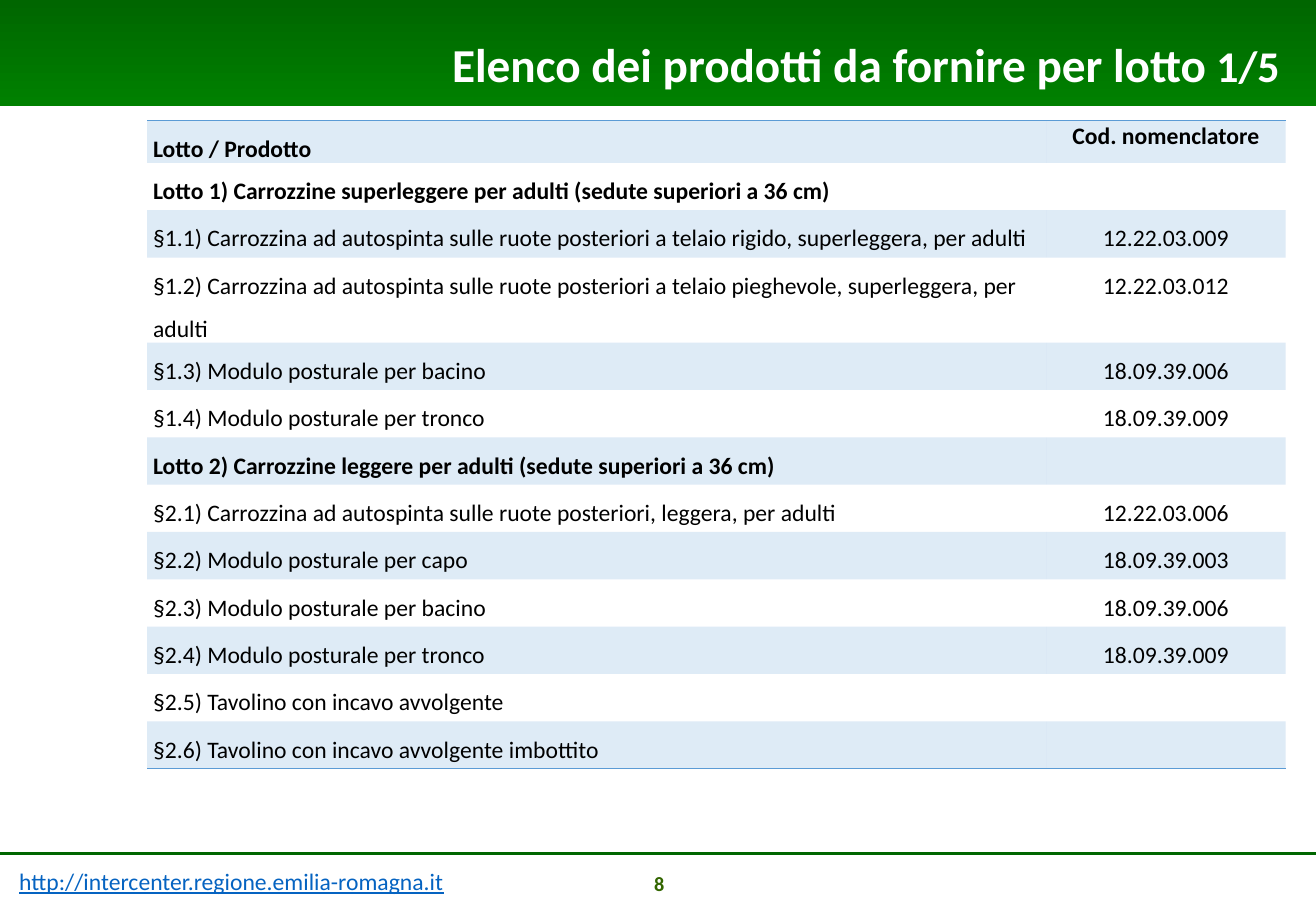
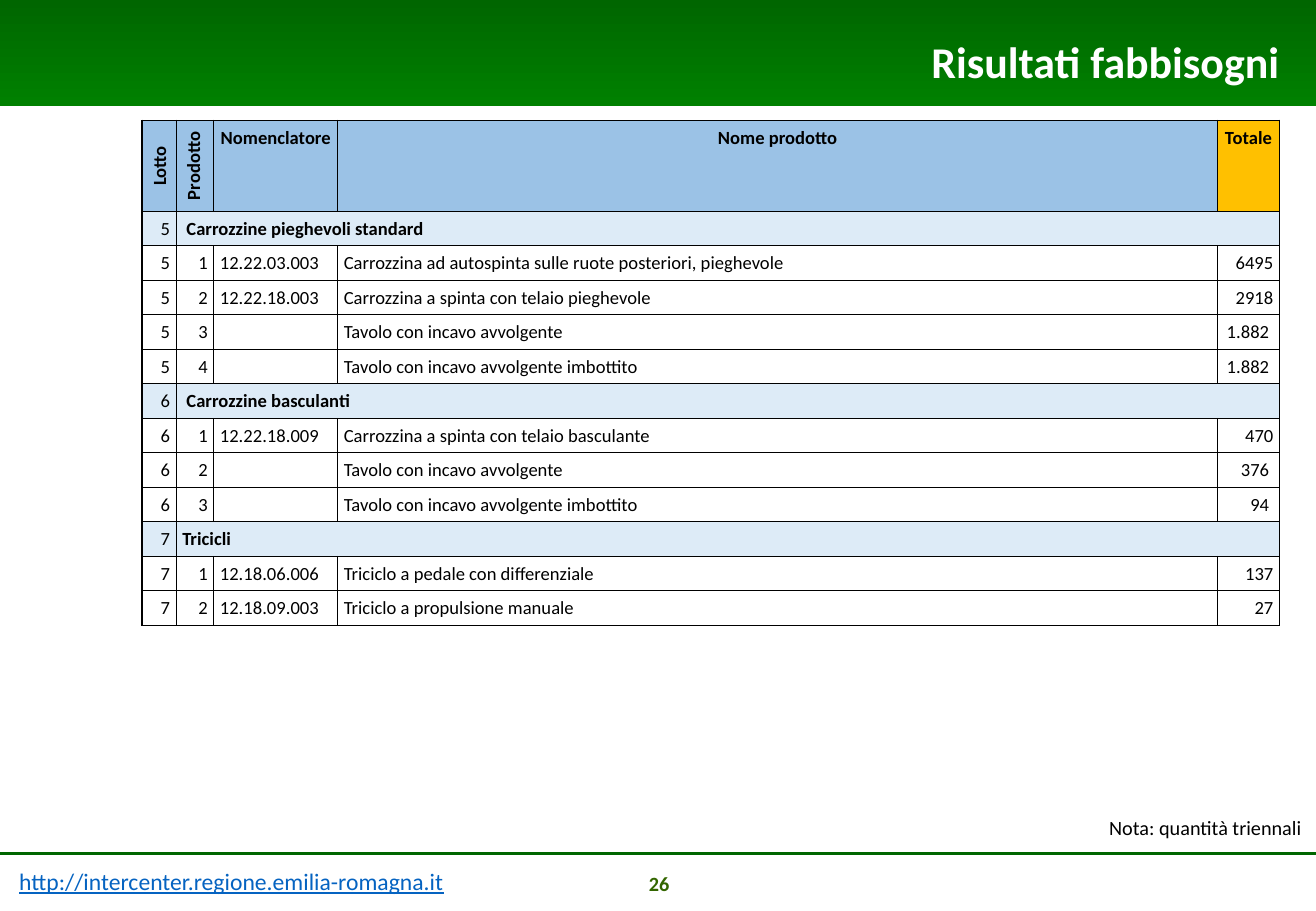
import pptx
import pptx.dml.color
import pptx.enum.dml
import pptx.enum.shapes
import pptx.enum.text
import pptx.oxml
import pptx.oxml.ns
import pptx.util

Inches = pptx.util.Inches
Pt = pptx.util.Pt
ALIGN = pptx.enum.text.PP_ALIGN
SLIDE_WIDTH, SLIDE_HEIGHT = 10.83, 7.5
FONT = "Calibri"
PLAIN_TABLE_STYLE = "{2D5ABB26-0587-4C30-8999-92F81FD0307C}"
COLORS = {
    "band_top": "006600", "band_bottom": "008000", "rule": "006600",
    "link": "0563C1", "page_number": "336600", "white": "FFFFFF",
    "black": "000000", "accent": "5B9BD5", "header": "9BC2E6",
    "total": "FFC000", "group": "DDEBF7",
}

PRODUCTS = [
    ("Lotto / Prodotto", "Cod. nomenclatore"),
    ("Lotto 1) Carrozzine superleggere per adulti (sedute superiori a 36 cm)", ""),
    ("§1.1) Carrozzina ad autospinta sulle ruote posteriori a telaio rigido, superleggera, per adulti", "12.22.03.009"),
    ("§1.2) Carrozzina ad autospinta sulle ruote posteriori a telaio pieghevole, superleggera, per adulti", "12.22.03.012"),
    ("§1.3) Modulo posturale per bacino", "18.09.39.006"),
    ("§1.4) Modulo posturale per tronco", "18.09.39.009"),
    ("Lotto 2) Carrozzine leggere per adulti (sedute superiori a 36 cm)", ""),
    ("§2.1) Carrozzina ad autospinta sulle ruote posteriori, leggera, per adulti", "12.22.03.006"),
    ("§2.2) Modulo posturale per capo", "18.09.39.003"),
    ("§2.3) Modulo posturale per bacino", "18.09.39.006"),
    ("§2.4) Modulo posturale per tronco", "18.09.39.009"),
    ("§2.5) Tavolino con incavo avvolgente", ""),
    ("§2.6) Tavolino con incavo avvolgente imbottito", ""),
]

NEEDS = [
    ("Lotto", "Prodotto", "Nomenclatore", "Nome prodotto", "Totale"),
    ("5", " Carrozzine pieghevoli standard"),
    ("5", "1", "12.22.03.003", "Carrozzina ad autospinta sulle ruote posteriori, pieghevole", "6495"),
    ("5", "2", "12.22.18.003", "Carrozzina a spinta con telaio pieghevole", "2918"),
    ("5", "3", "", "Tavolo con incavo avvolgente", "1.882 "),
    ("5", "4", "", "Tavolo con incavo avvolgente imbottito", "1.882 "),
    ("6", " Carrozzine basculanti"),
    ("6", "1", "12.22.18.009", "Carrozzina a spinta con telaio basculante", "470"),
    ("6", "2", "", "Tavolo con incavo avvolgente", "376 "),
    ("6", "3", "", "Tavolo con incavo avvolgente imbottito", "94 "),
    ("7", "Tricicli"),
    ("7", "1", "12.18.06.006", "Triciclo a pedale con differenziale", "137"),
    ("7", "2", "12.18.09.003", "Triciclo a propulsione manuale", "27"),
]


def rgb(name):
    """Return the named colour."""
    return pptx.dml.color.RGBColor.from_string(COLORS[name])


def set_font(font, size, color="black", bold=False):
    """Apply the deck's font with a size, colour and weight."""
    font.name, font.size, font.bold = FONT, Pt(size), bold
    font.color.rgb = rgb(color)


def add_text(page, box, runs, color="black", bold=False, align=ALIGN.LEFT, wrap=True):
    """Add a one-paragraph text box from (text, size) runs and return its paragraph."""
    frame = page.shapes.add_textbox(*map(Inches, box)).text_frame
    frame.word_wrap = wrap
    para = frame.paragraphs[0]
    para.alignment = align
    set_font(para.font, runs[0][1], color, bold)
    for text, size in runs:
        span = para.add_run()
        span.text = text
        if size != runs[0][1]:
            span.font.size = Pt(size)
    return para


def add_frame(page, title_runs, number):
    """Add the title band, title, footer rule, address and page number."""
    band = page.shapes.add_shape(
        pptx.enum.shapes.MSO_SHAPE.RECTANGLE, 0, 0, Inches(SLIDE_WIDTH), Inches(0.87))
    band.shadow.inherit = False
    band.line.fill.background()
    band.fill.gradient()
    band.fill.gradient_angle = 270
    for stop, name in zip(band.fill.gradient_stops, ("band_top", "band_bottom")):
        stop.color.rgb = rgb(name)
    add_text(page, (0.65, 0.24, 9.98, 0.57), title_runs, "white", True, ALIGN.RIGHT)

    rule = page.shapes.add_connector(
        pptx.enum.shapes.MSO_CONNECTOR.STRAIGHT,
        0, Inches(7.03), Inches(SLIDE_WIDTH), Inches(7.03))
    rule.line.color.rgb = rgb("rule")
    rule.line.width = Pt(1.75)
    rule._element.spPr.append(pptx.oxml.parse_xml(
        f'<a:effectLst {pptx.oxml.ns.nsdecls("a")}/>'))
    address = add_text(page, (0.06, 7.09, 4.81, 0.34),
                       [("http://intercenter.regione.emilia-romagna.it", 14)], "link")
    address.font.underline = True
    add_text(page, (4.3, 7.12, 2.25, 0.27), [(number, 12)], "page_number", True, ALIGN.CENTER)


def add_grid(page, left, top, widths, heights):
    """Add an unstyled table with the given column widths and row heights."""
    table = page.shapes.add_table(
        len(heights), len(widths), Inches(left), Inches(top),
        Inches(sum(widths)), Inches(sum(heights))).table
    table.first_row = table.horz_banding = False
    table._tbl.tblPr.find(pptx.oxml.ns.qn("a:tableStyleId")).text = PLAIN_TABLE_STYLE
    for column, width in zip(table.columns, widths):
        column.width = Inches(width)
    for row, height in zip(table.rows, heights):
        row.height = Inches(height)
    return table


def fill_cell(cell, text, size, bold, align, inset, spacing=None):
    """Write a cell's text with its font, alignment and insets."""
    cell.margin_left = cell.margin_right = Inches(0.05)
    cell.margin_top = cell.margin_bottom = Inches(inset)
    para = cell.text_frame.paragraphs[0]
    para.alignment = align
    if spacing:
        para.line_spacing = spacing
    set_font(para.font, size, bold=bold)
    if text:
        para.add_run().text = text
    else:
        para._p.get_or_add_endParaRPr().set("sz", str(size * 100))


def paint_cell(cell, color=None, opacity=100):
    """Fill a cell with a colour at an opacity in percent, or with nothing."""
    if color is None:
        cell.fill.background()
        return
    cell.fill.solid()
    cell.fill.fore_color.rgb = rgb(color)
    if opacity < 100:
        swatch = cell._tc.tcPr.find(".//" + pptx.oxml.ns.qn("a:srgbClr"))
        swatch.append(pptx.oxml.parse_xml(
            f'<a:alpha {pptx.oxml.ns.nsdecls("a")} val="{opacity * 1000}"/>'))


def border_cell(cell, color, widths):
    """Draw cell borders from a dict of side (L, R, T, B) to width in points."""
    sides = [side for side in "LRTB" if side in widths]
    for index, side in enumerate(sides):
        cell._tc.get_or_add_tcPr().insert(index, pptx.oxml.parse_xml(
            f'<a:ln{side} {pptx.oxml.ns.nsdecls("a")} w="{Pt(widths[side])}">'
            f'<a:solidFill><a:srgbClr val="{COLORS[color]}"/></a:solidFill></a:ln{side}>'))


def add_product_table(page, left, top):
    """Add the banded list of products and codes."""
    heights = [0.35] + [0.39] * (len(PRODUCTS) - 1)
    table = add_grid(page, left, top, (7.4, 1.97), heights)
    last = len(PRODUCTS) - 1
    for row, texts in enumerate(PRODUCTS):
        bold = texts[0].startswith("Lotto")
        for column, text in enumerate(texts):
            cell = table.cell(row, column)
            spacing = 1.07 if row == 0 and column == 1 else 1.5
            align = ALIGN.CENTER if column else ALIGN.LEFT
            fill_cell(cell, text, 14, bold, align, 0, spacing)
            paint_cell(cell, None if row % 2 else "accent", 20)
            border_cell(cell, "accent", {0: {"T": 1}, last: {"B": 1}}.get(row, {}))


def add_needs_table(page, left, top):
    """Add the ruled table of quantities, with one merged row for each lot."""
    widths = (0.28, 0.31, 1.02, 7.24, 0.51)
    table = add_grid(page, left, top, widths, [0.75] + [0.28] * (len(NEEDS) - 1))
    last = len(widths) - 1
    aligns = (ALIGN.RIGHT, ALIGN.RIGHT, ALIGN.LEFT, ALIGN.LEFT, ALIGN.RIGHT)
    for row, texts in enumerate(NEEDS):
        header, group = row == 0, len(texts) == 2
        for column in range(len(widths)):
            cell = table.cell(row, column)
            text = texts[column] if column < len(texts) else ""
            align = ALIGN.CENTER if header else aligns[column]
            if group and column:
                align = ALIGN.LEFT
            fill_cell(cell, text, 11, header or (group and column > 0), align, 0.05)
            if header:
                paint_cell(cell, "total" if column == last else "header")
            else:
                paint_cell(cell, "group" if group else None)
            if header and column < 2:
                cell._tc.tcPr.set("vert", "vert270")
            border_cell(cell, "black", {
                "L": 1 if column == 0 else 0.5, "R": 1 if column == last else 0.5,
                "T": 1 if row < 2 else 0.5, "B": 1 if header else 0.5})
        if group:
            table.cell(row, 1).merge(table.cell(row, last))


def build_products(page):
    """Build the slide listing the products of each lot."""
    add_frame(page, [("Elenco dei prodotti da fornire per lotto ", 28), ("1/5", 26)], "8")
    add_product_table(page, 1.21, 0.99)


def build_needs(page):
    """Build the slide with the quantities needed."""
    add_frame(page, [("Risultati fabbisogni", 26)], "26")
    add_needs_table(page, 1.17, 0.99)
    add_text(page, (9.03, 6.66, 1.8, 0.3), [("Nota: quantità triennali", 12)], wrap=False)


def main():
    """Build and save the deck."""
    deck = pptx.Presentation()
    deck.slide_width, deck.slide_height = Inches(SLIDE_WIDTH), Inches(SLIDE_HEIGHT)
    for build in (build_products, build_needs):
        build(deck.slides.add_slide(deck.slide_layouts[6]))
    deck.save("out.pptx")


if __name__ == "__main__":
    main()
